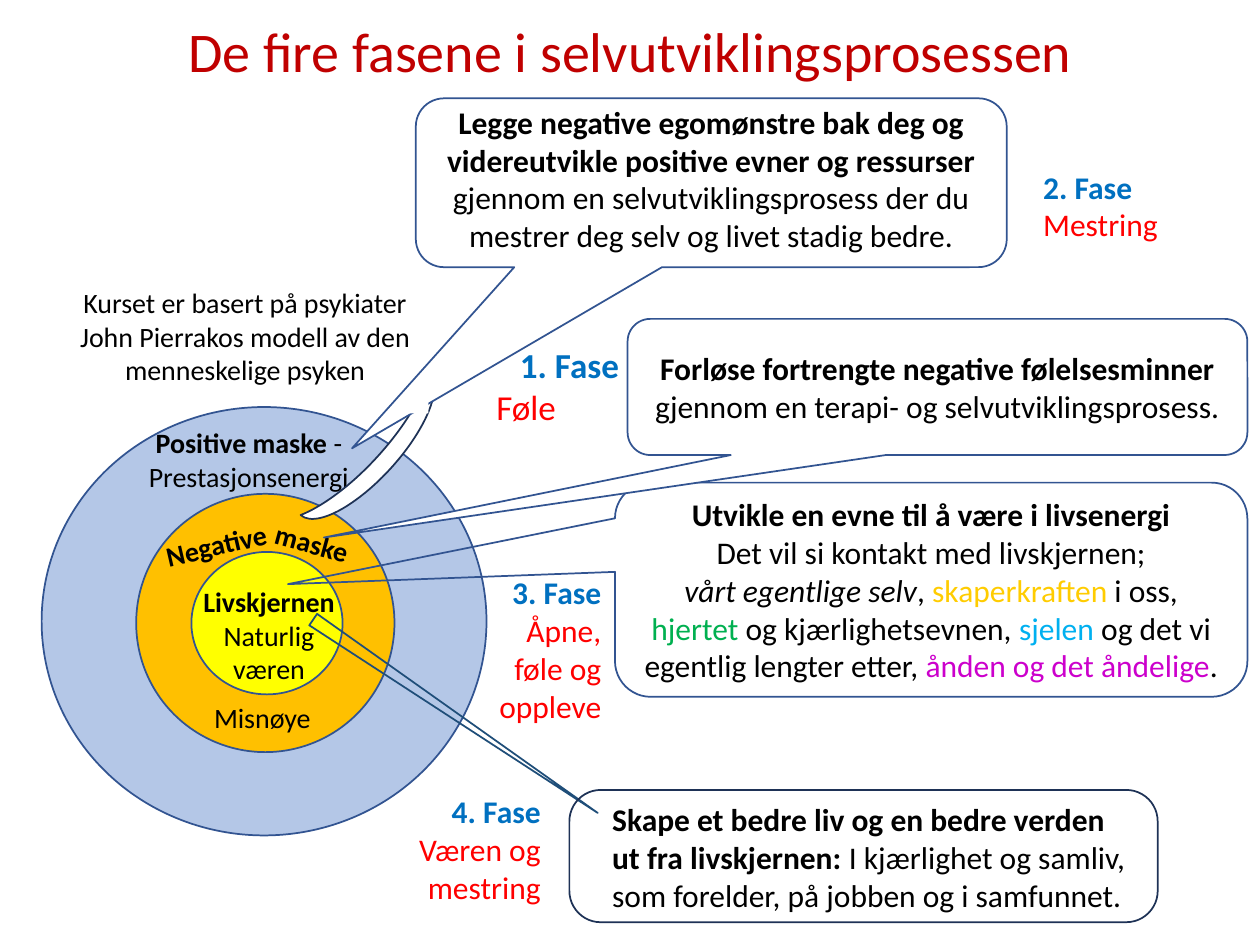
from pptx import Presentation
from pptx.dml.color import RGBColor
from pptx.enum.shapes import MSO_SHAPE
from pptx.enum.text import MSO_ANCHOR, MSO_AUTO_SIZE, PP_ALIGN
from pptx.util import Pt

OVAL = MSO_SHAPE.OVAL
CALLOUT = MSO_SHAPE.ROUNDED_RECTANGULAR_CALLOUT
ROUNDED = MSO_SHAPE.ROUNDED_RECTANGLE
TRIANGLE = MSO_SHAPE.ISOSCELES_TRIANGLE
MOON = MSO_SHAPE.MOON
RECTANGLE = MSO_SHAPE.RECTANGLE
MIDDLE = MSO_ANCHOR.MIDDLE
NO_AUTO_SIZE = MSO_AUTO_SIZE.NONE
LEFT, CENTER, RIGHT = PP_ALIGN.LEFT, PP_ALIGN.CENTER, PP_ALIGN.RIGHT

FONT = "Calibri"
BLACK, WHITE, RED, BLUE = "000000", "FFFFFF", "FF0000", "0070C0"
OUTLINE, DARK_OUTLINE, POINTER_OUTLINE = "325491", "1E3256", "1F4E79"


def color(value):
    return RGBColor.from_string(value)


def plain(text, value=BLACK):
    return text, value, False, False


def bold(text, value=BLACK):
    return text, value, True, False


def italic(text, value=BLACK):
    return text, value, False, True


def write_text(shape, paragraphs, size, alignment):
    frame = shape.text_frame
    frame.word_wrap = True
    for index, runs in enumerate(paragraphs):
        paragraph = frame.paragraphs[0] if index == 0 else frame.add_paragraph()
        paragraph.alignment = alignment
        paragraph.font.size = Pt(size)
        paragraph.font.name = FONT
        for text, value, is_bold, is_italic in runs:
            for number, line in enumerate(text.split("\n")):
                if number:
                    paragraph.add_line_break()
                if line:
                    run = paragraph.add_run()
                    run.text = line
                    run.font.color.rgb = color(value)
                    run.font.bold = is_bold
                    run.font.italic = is_italic


def add_title(slide, text, box):
    title = slide.shapes.title
    title.left, title.top, title.width, title.height = map(Pt, box)
    title.text_frame.auto_size = NO_AUTO_SIZE
    title.text_frame.vertical_anchor = MIDDLE
    write_text(title, [[plain(text, "C00000")]], 32, CENTER)


def add_label(slide, box, paragraphs, size=16, alignment=LEFT, rotation=0):
    label = slide.shapes.add_textbox(*map(Pt, box))
    label.rotation = rotation
    write_text(label, paragraphs, size, alignment)
    return label


def add_figure(slide, kind, box, fill=None, line=OUTLINE, rotation=0, adjustments=()):
    shape = slide.shapes.add_shape(kind, *map(Pt, box))
    shape.shadow.inherit = False
    shape.rotation = rotation
    for index, value in enumerate(adjustments):
        shape.adjustments[index] = value
    if fill:
        shape.fill.solid()
        shape.fill.fore_color.rgb = color(fill)
    else:
        shape.fill.background()
    if line:
        shape.line.color.rgb = color(line)
        shape.line.width = Pt(1)
    else:
        shape.line.fill.background()
    return shape


def add_callout(slide, box, tip, paragraphs, fill=None):
    callout = add_figure(slide, CALLOUT, box, fill, adjustments=(*tip, 0.167))
    callout.text_frame.vertical_anchor = MIDDLE
    write_text(callout, paragraphs, 18, CENTER)
    return callout


def add_psyche_model(slide):
    add_figure(slide, OVAL, (23.8, 232.6, 254.2, 244.8), "B4C7E7")
    add_figure(slide, OVAL, (77.8, 282.2, 147.6, 147.6), "FFC000")
    add_figure(slide, OVAL, (109.4, 315.4, 86.4, 81.4), "FFFF00")
    add_label(slide, (87.1, 296.6, 86.4, 26.6), [[bold("Negative")]], rotation=347)
    add_label(slide, (103.7, 330.5, 100.1, 65.5),
              [[bold("Livskjernen\n"), plain("Naturlig væren")]], alignment=CENTER)
    add_label(slide, (149.8, 298.1, 65.5, 26.6), [[bold("maske")]], rotation=15.2)
    add_label(slide, (115.2, 396.7, 80.6, 26.6), [[plain("Misnøye")]])
    add_label(slide, (68.4, 239.8, 147.6, 46.1),
              [[bold("Positive maske "), plain("-\nPrestasjonsenergi")]], alignment=CENTER)


def add_phase_labels(slide):
    add_label(slide, (589, 92.2, 82.8, 51.1),
              [[bold("2. Fase", BLUE)], [plain("Mestring", RED)]], 18)
    feeling = add_label(slide, (276.5, 193, 87.1, 55.4),
                        [[bold("1. Fase", BLUE)], [plain("Føle", RED)]], 20)
    heading = feeling.text_frame.paragraphs[0]
    heading._p.get_or_add_pPr().set("indent", str(Pt(13.5)))
    add_label(slide, (268.6, 324, 82.1, 94.3),
              [[bold("3. Fase\n", BLUE), plain("Åpne, føle og oppleve", RED)]], 18, RIGHT)
    add_label(slide, (227.5, 449.3, 88.6, 72.7),
              [[bold("4. Fase\n", BLUE), plain("Væren og mestring", RED)]], 18, RIGHT)


def add_life_energy(slide):
    add_callout(slide, (351.4, 275.8, 361.4, 122.4), (-1.017, -0.026), [
        [bold("Utvikle en evne til å være i livsenergi\n"),
         plain("Det vil si kontakt med livskjernen;\n"),
         italic("vårt egentlige selv"), plain(", "),
         plain("skaperkraften", "FFCC00"), plain(" i oss,")],
        [plain("hjertet ", "00B050"), plain("og kjærlighetsevnen, "),
         plain("sjelen", "00B0F0"), plain(" og det vi egentlig lengter etter, "),
         plain("ånden og det åndelige", "CC00CC"), plain(".")],
    ])


def add_better_world(slide):
    add_figure(slide, TRIANGLE, (256.3, 311, 7.9, 196.6), line=POINTER_OUTLINE, rotation=124.2)
    add_label(slide, (342.7, 453.6, 320.4, 72.7), [
        [bold("Skape et bedre liv og en bedre verden\nut fra livskjernen: "),
         plain("I kjærlighet og samliv, som forelder, på jobben og i samfunnet.")]], 18)
    add_figure(slide, ROUNDED, (325.4, 451.4, 336.2, 75.6),
               line=DARK_OUTLINE, adjustments=(0.237,))


def add_release(slide):
    add_callout(slide, (358.6, 182.2, 354.2, 77.8), (-0.99, 1.106), [
        [bold("Forløse fortrengte negative følelsesminner "),
         plain("gjennom en terapi- og selvutviklingsprosess.")]], WHITE)


def add_mastery(slide):
    add_figure(slide, MOON, (205.9, 205.9, 20.2, 109.4), WHITE, DARK_OUTLINE, 222.2)
    callout = add_callout(slide, (237.6, 56.2, 337.7, 96.5), (-0.608, 1.573), [
        [bold("Legge negative egomønstre bak deg og videreutvikle positive evner og ressurser "),
         plain("gjennom en selvutviklingsprosess der du mestrer deg selv og livet stadig bedre.")]],
        WHITE)
    callout.text_frame.margin_bottom = Pt(8.5)
    add_figure(slide, RECTANGLE, (230.4, 225.4, 14.4, 10.8), WHITE, None)


def main():
    presentation = Presentation()
    presentation.slide_width, presentation.slide_height = Pt(720), Pt(540)
    slide = presentation.slides.add_slide(presentation.slide_layouts[5])
    add_psyche_model(slide)
    add_phase_labels(slide)
    add_life_energy(slide)
    add_better_world(slide)
    add_label(slide, (36, 159.8, 208.1, 65.5), [
        [plain("Kurset er basert på psykiater John Pierrakos modell av den menneskelige psyken")]],
        alignment=CENTER)
    add_title(slide, "De fire fasene i selvutviklingsprosessen", (90, 5.8, 540.7, 46.1))
    add_release(slide)
    add_mastery(slide)
    presentation.save("out.pptx")


if __name__ == "__main__":
    main()
